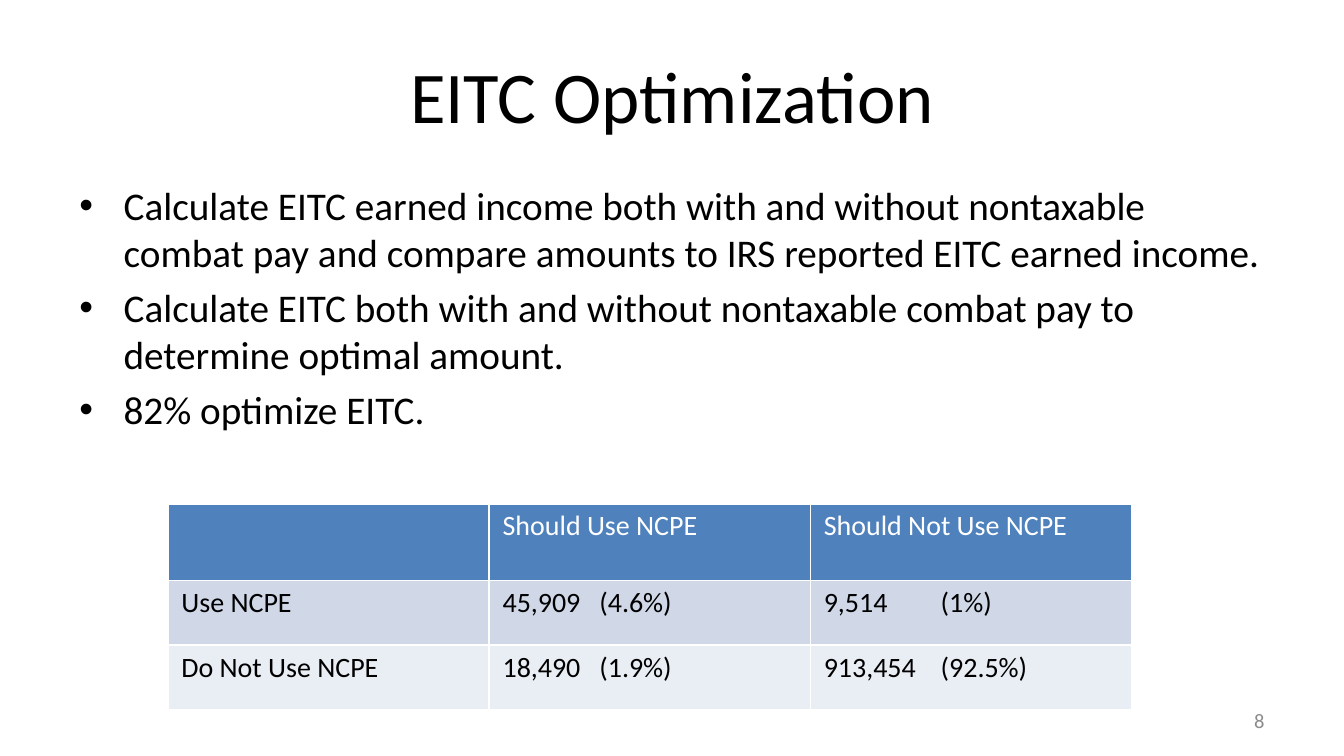
from pptx import Presentation
from pptx.dml.color import RGBColor
from pptx.enum.text import MSO_ANCHOR, MSO_AUTO_SIZE, PP_ALIGN
from pptx.oxml.ns import qn
from pptx.util import Inches, Pt
from lxml.etree import SubElement

BLACK = RGBColor(0x00, 0x00, 0x00)
WHITE = RGBColor(0xFF, 0xFF, 0xFF)
GRAY = RGBColor(0x8C, 0x8C, 0x8C)
HEADER_BLUE = RGBColor(0x4F, 0x81, 0xBD)
BAND_DARK = RGBColor(0xD0, 0xD8, 0xE8)
BAND_LIGHT = RGBColor(0xE9, 0xED, 0xF4)

SLIDE_WIDTH = Inches(10)
SLIDE_HEIGHT = SLIDE_WIDTH * 9 // 16

POINTS = [
    "Calculate EITC earned income both with and without nontaxable combat pay "
    "and compare amounts to IRS reported EITC earned income.",
    "Calculate EITC both with and without nontaxable combat pay to determine "
    "optimal amount.",
    "82% optimize EITC.",
]
NCPE_ROWS = [
    ("", "Should Use NCPE", "Should Not Use NCPE"),
    ("Use NCPE", "45,909\t(4.6%)", "9,514\t(1%)"),
    ("Do Not Use NCPE", "18,490\t(1.9%)", "913,454\t(92.5%)"),
]
ROW_HEIGHTS = (0.57, 0.48, 0.48)
ROW_FILLS = (HEADER_BLUE, BAND_DARK, BAND_LIGHT)
PERCENT_TABS = (0, 0.72, 0.87)


def apply_format(target, values):
    """Set each attribute named in a dict of format values."""
    for name, value in values.items():
        setattr(target, name, value)


def style_font(paragraph, size, color):
    """Give a paragraph its regular Calibri font."""
    apply_format(paragraph.font, {"name": "Calibri", "size": Pt(size), "bold": False})
    paragraph.font.color.rgb = color


def place_text(holder, box, lines, size, color, align, anchor):
    """Place a text holder in its box and fill it with one paragraph per line."""
    left, top, width, height = box
    apply_format(holder, {"left": Inches(left), "top": Inches(top),
                          "width": Inches(width), "height": Inches(height)})
    frame = holder.text_frame
    frame.text = "\n".join(lines)
    apply_format(frame, {
        "word_wrap": True, "auto_size": MSO_AUTO_SIZE.NONE, "vertical_anchor": anchor,
        "margin_left": Inches(0.09), "margin_right": Inches(0.09),
        "margin_top": Inches(0.04), "margin_bottom": Inches(0.04)})
    for paragraph in frame.paragraphs:
        paragraph.alignment = align
        style_font(paragraph, size, color)
    return frame


def add_points(holder, box):
    """Fill the body placeholder with the bulleted points."""
    frame = place_text(holder, box, POINTS, 21, BLACK, PP_ALIGN.LEFT, MSO_ANCHOR.TOP)
    for paragraph in frame.paragraphs:
        properties = paragraph._p.get_or_add_pPr()
        properties.set("marL", str(Inches(0.33)))
        properties.set("indent", str(Inches(-0.33)))


def add_percent_tab(paragraph, position):
    """Add a left tab stop that lines up the percentages of a column."""
    tabs = SubElement(paragraph._p.get_or_add_pPr(), qn("a:tabLst"))
    SubElement(tabs, qn("a:tab"), pos=str(Inches(position)), algn="l")


def add_ncpe_table(slide, box):
    """Add the table of actual against optimal use of NCPE."""
    table = slide.shapes.add_table(
        len(NCPE_ROWS), len(NCPE_ROWS[0]), *map(Inches, box)).table
    for row, height in zip(table.rows, ROW_HEIGHTS):
        row.height = Inches(height)
    for r, texts in enumerate(NCPE_ROWS):
        for c, text in enumerate(texts):
            cell = table.cell(r, c)
            cell.fill.solid()
            cell.fill.fore_color.rgb = ROW_FILLS[r]
            cell.text = text
            apply_format(cell, {"margin_top": Inches(0.04), "margin_bottom": Inches(0.04)})
            paragraph = cell.text_frame.paragraphs[0]
            if "\t" in text:
                add_percent_tab(paragraph, PERCENT_TABS[c])
            style_font(paragraph, 15, BLACK if r else WHITE)


def add_page_number(slide, box):
    """Add the page number at the lower right."""
    number = slide.shapes.add_textbox(*map(Inches, box))
    place_text(number, box, ["8"], 11, GRAY, PP_ALIGN.RIGHT, MSO_ANCHOR.MIDDLE)


def main():
    """Build and save the slide."""
    deck = Presentation()
    apply_format(deck, {"slide_width": SLIDE_WIDTH, "slide_height": SLIDE_HEIGHT})
    slide = deck.slides.add_slide(deck.slide_layouts[1])
    place_text(slide.shapes.title, (0.5, 0.23, 9, 0.94), ["EITC Optimization"],
               39, BLACK, PP_ALIGN.CENTER, MSO_ANCHOR.MIDDLE)
    add_points(slide.placeholders[1], (0.5, 1.31, 9, 2.31))
    add_page_number(slide, (7.17, 5.21, 2.33, 0.3))
    add_ncpe_table(slide, (1.25, 3.75, 7.17, 1.53))
    deck.save("out.pptx")


if __name__ == "__main__":
    main()
